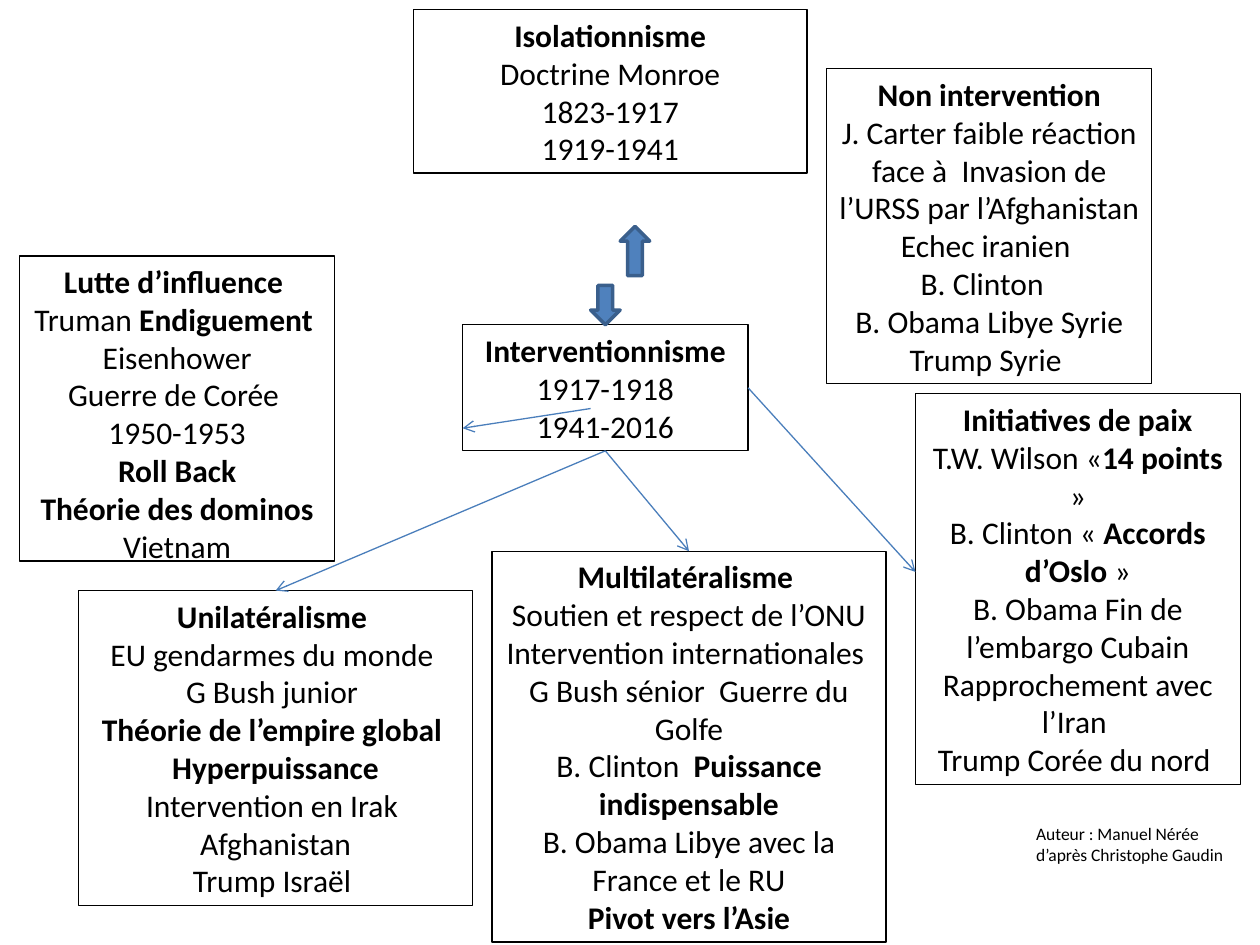
from lxml.etree import SubElement
from pptx import Presentation
from pptx.dml.color import RGBColor
from pptx.enum.shapes import MSO_CONNECTOR, MSO_SHAPE
from pptx.enum.text import MSO_ANCHOR, PP_ALIGN
from pptx.oxml.ns import qn
from pptx.util import Inches, Pt

THEME = {
    "font": "Calibri", "body": 18, "small": 10,
    "ink": "000000", "fill": "4F81BD", "edge": "3A5F8C", "link": "4A7EBB",
    "thin": 0.75, "thick": 2,
}
WIDE, HIGH = 10, 7.5
COLS = 128  # square cells: 128 columns by 96 rows
CELL = WIDE / COLS

# Boxes: left, top, width, height in cells, then lines (** marks bold)
BOXES = {
    "isolation": ((42, 1, 40, 16.6), [
        "**Isolationnisme**", "Doctrine Monroe", "1823-1917", "1919-1941"]),
    "action": ((47, 33, 29, 12.8), [
        "**Interventionnisme**", "1917-1918", "1941-2016"]),
    "peace": ((93, 40, 33, 39.7), [
        "**Initiatives de paix**",
        "T.W. Wilson «**14 points **»",
        "B. Clinton « **Accords d’Oslo** »",
        "B. Obama Fin de l’embargo Cubain",
        "Rapprochement avec l’Iran ",
        "Trump Corée du nord "]),
    "multi": ((50, 56, 40, 39.7), [
        "**Multilatéralisme **",
        "Soutien et respect de l’ONU",
        "Intervention internationales ",
        "G Bush sénior  Guerre du Golfe",
        "B. Clinton  **Puissance indispensable**",
        "B. Obama Libye avec la France et le RU",
        "**Pivot vers l’Asie**"]),
    "uni": ((8, 60, 40, 32), [
        "**Unilatéralisme **",
        "EU gendarmes du monde ",
        "G Bush junior ",
        "**Théorie de l’empire global **",
        "**Hyperpuissance**",
        "Intervention en Irak ",
        "Afghanistan",
        "Trump Israël "]),
    "influence": ((2, 26, 32, 31), [
        "**Lutte d’influence **",
        "Truman **Endiguement **",
        "Eisenhower",
        "Guerre de Corée ",
        "1950-1953",
        "**Roll Back**",
        "**Théorie des dominos**",
        "Vietnam"]),
    "neutral": ((84, 7, 33, 32), [
        "**Non intervention**",
        "J. Carter faible réaction face à  Invasion de l’URSS par l’Afghanistan ",
        "Echec iranien ",
        "B. Clinton  ",
        "B. Obama Libye Syrie",
        "Trump Syrie "]),
}
NO_WRAP = {"influence"}
CREDIT = ((104, 83, 24, 5.5), ["Auteur : Manuel Nérée d’après Christophe Gaudin"])

# Block arrows: area in cells, rotation
BLOCKS = [((60, 29, 3, 4), 0), ((63, 23, 3, 5), 180)]

# Links: start, end in cells, joined start and end as (box, side)
LINKS = [
    ((60, 41.5), (47, 43.5), None, None),
    ((61.5, 45.8), (28, 60), ("action", 2), ("uni", 0)),
    ((61.5, 45.8), (70, 56), ("action", 2), ("multi", 0)),
    ((76, 39.4), (93, 58.1), ("action", 3), None),
]


def place(cells):
    return [Inches(n * CELL) for n in cells]


def color(name):
    return RGBColor.from_string(THEME[name])


def write(shape, lines, size, align, wrap=True):
    frame = shape.text_frame
    frame.word_wrap = wrap
    frame.vertical_anchor = MSO_ANCHOR.TOP
    for i, line in enumerate(lines):
        para = frame.paragraphs[0] if i == 0 else frame.add_paragraph()
        para.alignment = align
        for j, part in enumerate(line.split("**")):
            if part:
                run = para.add_run()
                run.text = part
                font = run.font
                font.name, font.size = THEME["font"], Pt(THEME[size])
                font.bold = j % 2 == 1
                font.color.rgb = color("ink")


def stroke(shape, name, width):
    shape.line.color.rgb = color(name)
    shape.line.width = Pt(THEME[width])


def main():
    deck = Presentation()
    deck.slide_width, deck.slide_height = Inches(WIDE), Inches(HIGH)
    shapes = deck.slides.add_slide(deck.slide_layouts[6]).shapes

    # Topic boxes
    made = {}
    for name, (area, lines) in BOXES.items():
        box = shapes.add_shape(MSO_SHAPE.RECTANGLE, *place(area))
        box.shadow.inherit = False
        box.fill.background()
        stroke(box, "ink", "thin")
        write(box, lines, "body", PP_ALIGN.CENTER, name not in NO_WRAP)
        made[name] = box

    # Block arrows
    for area, turn in BLOCKS:
        block = shapes.add_shape(MSO_SHAPE.DOWN_ARROW, *place(area))
        block.shadow.inherit = False
        block.rotation = turn
        block.fill.solid()
        block.fill.fore_color.rgb = color("fill")
        stroke(block, "edge", "thick")

    # Thin links
    for start, end, tail, head in LINKS:
        link = shapes.add_connector(MSO_CONNECTOR.STRAIGHT, *place(start + end))
        if tail:
            link.begin_connect(made[tail[0]], tail[1])
        if head:
            link.end_connect(made[head[0]], head[1])
        stroke(link, "link", "thin")
        SubElement(link.line._get_or_add_ln(), qn("a:tailEnd"), type="arrow")
        SubElement(link._element.spPr, qn("a:effectLst"))

    # Credit
    area, lines = CREDIT
    write(shapes.add_textbox(*place(area)), lines, "small", PP_ALIGN.LEFT)

    deck.save("out.pptx")


if __name__ == "__main__":
    main()
